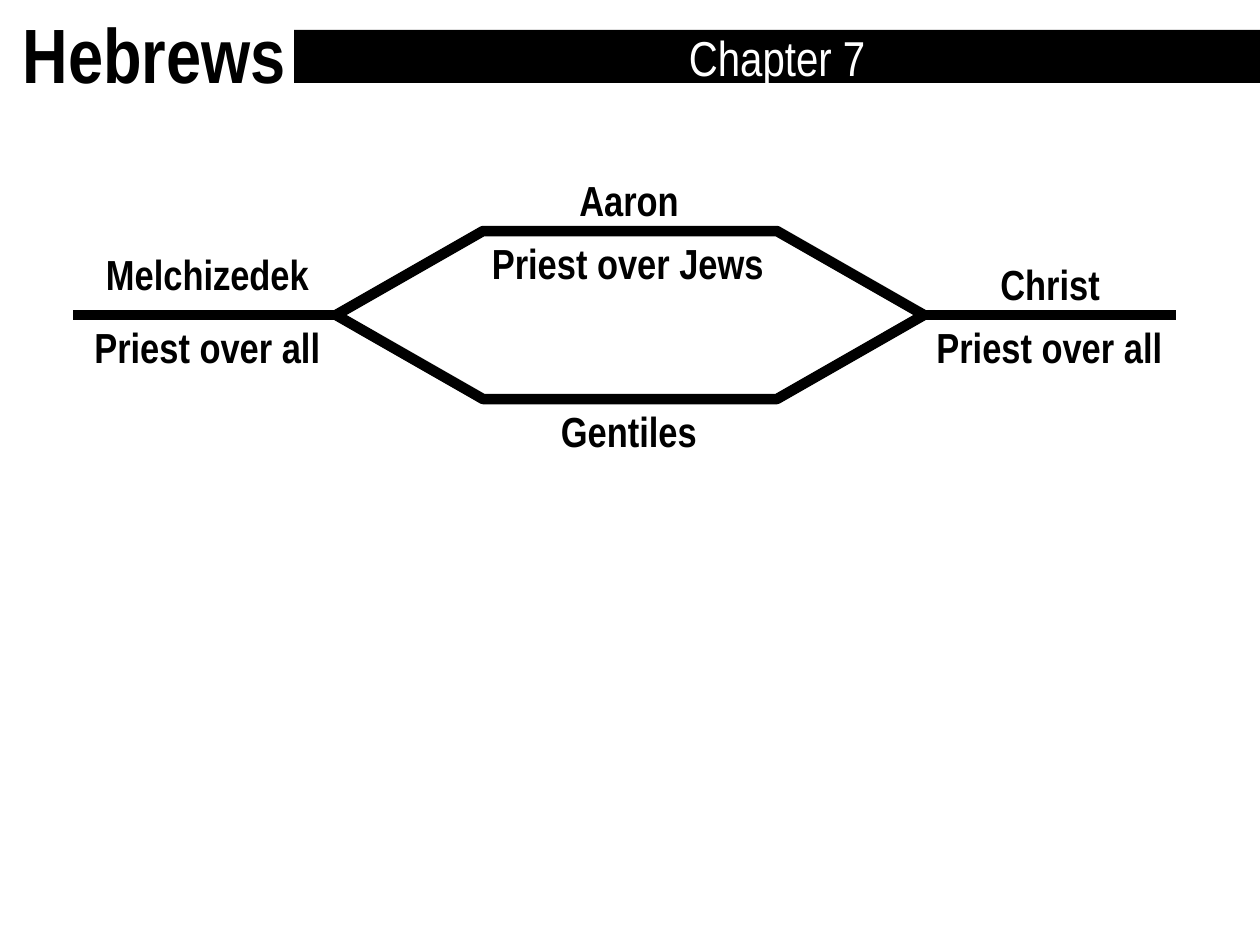
"""Build the Hebrews chapter 7 priesthood diagram."""
import pptx
import pptx.dml.color
import pptx.enum.shapes
import pptx.enum.text
import pptx.util
from dataclasses import dataclass
from lxml import etree

TITLE = ("Hebrews", (10, 0, 1250, 106))
CHAPTER = ("Chapter 7", (294, 30, 966, 53))
HEXAGON = (336, 231, 588, 168)
BRANCHES = [(336, 73), (1176, 924)]
LEFT, MIDDLE, RIGHT = 209, 630, 1051
LABELS = [
    ("Melchizedek", LEFT, 242, 231),
    ("Priest over all", LEFT, 315, 254),
    ("Christ", RIGHT, 252, 126),
    ("Priest over all", RIGHT, 315, 254),
    ("Priest over Jews", MIDDLE, 231, 301),
    ("Aaron", MIDDLE, 168, 126),
    ("Gentiles", MIDDLE, 399, 163),
]
LABEL_HEIGHT = 63


@dataclass(frozen=True)
class Theme:
    font: str = "Arial Narrow"
    ink: str = "000000"
    paper: str = "FFFFFF"
    title: int = 44
    chapter: int = 28
    label: int = 24
    line: int = 6


THEME = Theme()


def px(n):
    return pptx.util.Emu(round(n * 914400 / 126))


def rgb(color):
    return pptx.dml.color.RGBColor.from_string(color)


def write(sp, text, size, color, bold, align="LEFT", anchor="TOP", wrap=True):
    tf = sp.text_frame
    tf.word_wrap = wrap
    tf.auto_size = pptx.enum.text.MSO_AUTO_SIZE.NONE
    tf.vertical_anchor = pptx.enum.text.MSO_ANCHOR[anchor]
    p = tf.paragraphs[0]
    p.alignment = pptx.enum.text.PP_ALIGN[align]
    r = p.add_run()
    r.text = text
    r.font.name, r.font.size, r.font.bold = THEME.font, pptx.util.Pt(size), bold
    r.font.color.rgb = rgb(color)


def stroke(sp):
    sp.line.color.rgb = rgb(THEME.ink)
    sp.line.width = pptx.util.Pt(THEME.line)


def add_shape(s, kind, box):
    sp = s.shapes.add_shape(pptx.enum.shapes.MSO_SHAPE[kind], *map(px, box))
    sp.shadow.inherit = False
    return sp


def main():
    prs = pptx.Presentation()
    prs.slide_width, prs.slide_height = px(1260), px(945)
    s = prs.slides.add_slide(prs.slide_layouts[5])
    s.background.fill.solid()
    s.background.fill.fore_color.rgb = rgb(THEME.paper)

    text, box = TITLE
    sp = s.shapes.title
    sp.left, sp.top, sp.width, sp.height = map(px, box)
    write(sp, text, THEME.title, THEME.ink, True)

    sp = add_shape(s, "HEXAGON", HEXAGON)
    sp.adjustments[0], sp.adjustments[1] = 0.875, 1.155
    sp.fill.background()
    stroke(sp)

    y = HEXAGON[1] + HEXAGON[3] / 2
    for start, end in BRANCHES:
        line = s.shapes.add_connector(
            pptx.enum.shapes.MSO_CONNECTOR.STRAIGHT, px(start), px(y), px(end), px(y))
        stroke(line)
        etree.SubElement(line._element.spPr, pptx.oxml.ns.qn("a:effectLst"))

    for text, center, top, width in LABELS:
        box = (center - width / 2, top, width, LABEL_HEIGHT)
        sp = s.shapes.add_textbox(*map(px, box))
        write(sp, text, THEME.label, THEME.ink, True, wrap=False)

    text, box = CHAPTER
    sp = add_shape(s, "RECTANGLE", box)
    sp.fill.solid()
    sp.fill.fore_color.rgb = rgb(THEME.ink)
    sp.line.fill.background()
    write(sp, text, THEME.chapter, THEME.paper, False, "CENTER", "MIDDLE")

    prs.save("out.pptx")


if __name__ == "__main__":
    main()
